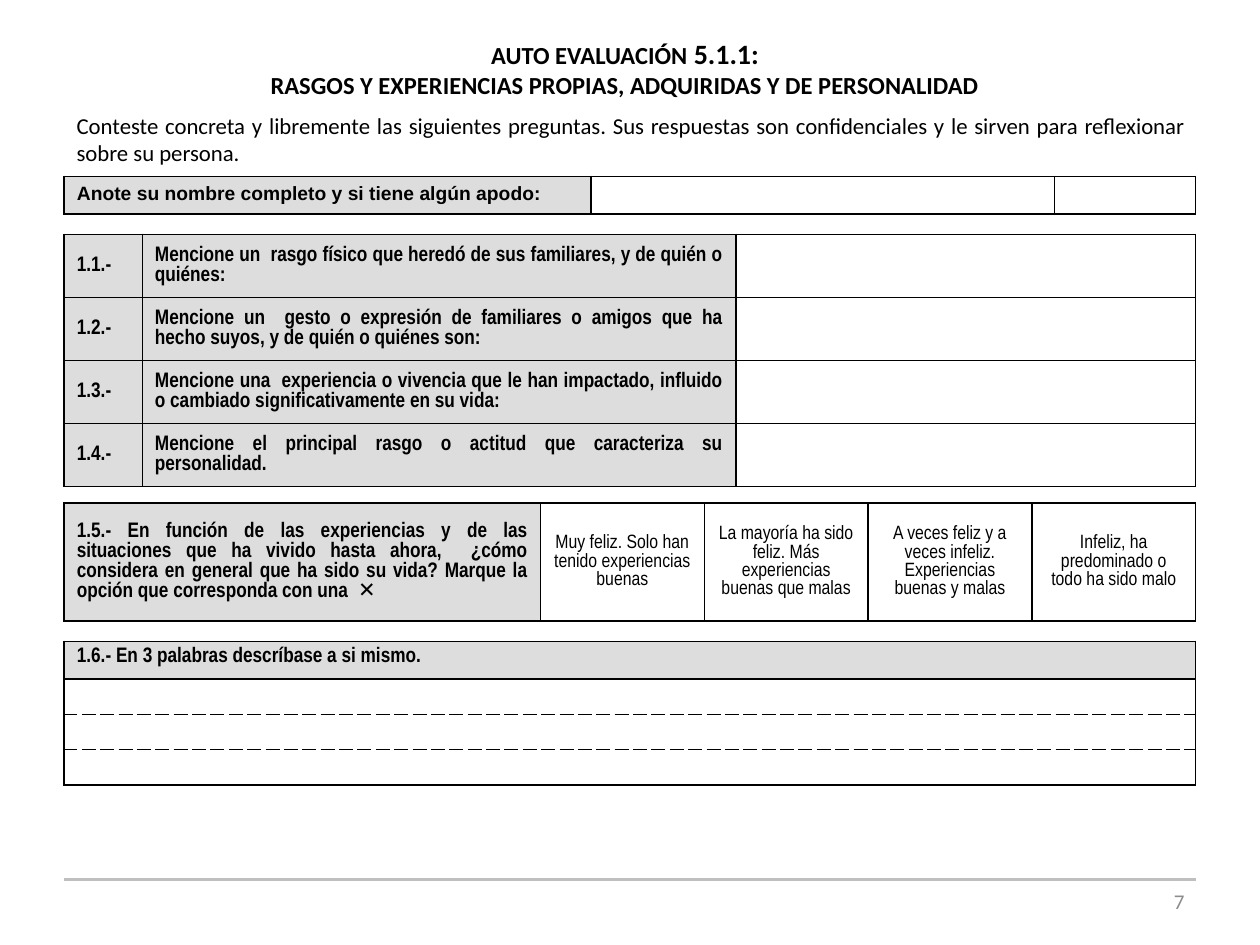
"""Build the self-assessment slide with its question tables."""
from lxml.etree import SubElement
from pptx import Presentation
from pptx.dml.color import RGBColor
from pptx.enum.shapes import MSO_CONNECTOR
from pptx.enum.text import MSO_ANCHOR, PP_ALIGN
from pptx.oxml.ns import qn
from pptx.util import Inches, Pt

LEFT, WIDE = 0.51, 8.98
GREY = "DDDDDD"


def style(para, text, face, size, bold=False, align=PP_ALIGN.JUSTIFY, color="000000"):
    para.text = text
    para.alignment = align
    para.font.name = face
    para.font.size = Pt(size)
    para.font.bold = bold
    para.font.color.rgb = RGBColor.from_string(color)
    if not text:
        SubElement(para._p, qn("a:endParaRPr"), sz=str(size * 100))


def grid(top, cols, rows, texts, face="Arial Narrow", anchor=MSO_ANCHOR.MIDDLE, dash=()):
    high = Inches(sum(rows))
    frame = slide.shapes.add_table(len(rows), len(cols), Inches(LEFT), Inches(top), Inches(WIDE), high)
    table = frame.table
    table.first_row = table.horz_banding = False
    for col, wide in zip(table.columns, cols):
        col.width = Inches(wide)
    for r, (row, tall) in enumerate(zip(table.rows, rows)):
        row.height = Inches(tall)
        for cell, (text, size, bold) in zip(row.cells, texts[r]):
            cell.vertical_anchor = anchor
            props = cell._tc.get_or_add_tcPr()
            for side in "LRTB":
                line = SubElement(props, qn(f"a:ln{side}"), w="12700")
                fill = SubElement(line, qn("a:solidFill"))
                SubElement(fill, qn("a:srgbClr"), val="000000")
                edge = {"T": r, "B": r + 1}.get(side)
                SubElement(line, qn("a:prstDash"), val="sysDash" if edge in dash else "solid")
            if bold:
                cell.fill.solid()
                cell.fill.fore_color.rgb = RGBColor.from_string(GREY)
            else:
                cell.fill.background()
            align = PP_ALIGN.JUSTIFY if bold else PP_ALIGN.CENTER
            parts = text.split("\n")
            for i, part in enumerate(parts):
                para = cell.text_frame.paragraphs[0] if i == 0 else cell.text_frame.add_paragraph()
                style(para, part, face, size, bold, align)


deck = Presentation()
deck.slide_width, deck.slide_height = Inches(10), Inches(7.5)
slide = deck.slides.add_slide(deck.slide_layouts[6])

rule = slide.shapes.add_connector(
    MSO_CONNECTOR.STRAIGHT, Inches(LEFT), Inches(6.98), Inches(LEFT + WIDE), Inches(6.98))
rule.line.color.rgb = RGBColor.from_string("BFBFBF")
rule.line.width = Pt(2)
SubElement(rule._element.spPr, qn("a:effectLst"))

boxes = []
for spot in [(0.67, 0.32, 8.58, 0.52), (LEFT, 0.84, WIDE, 0.53), (7.17, 6.95, 2.33, 0.4)]:
    box = slide.shapes.add_textbox(*map(Inches, spot)).text_frame
    box.word_wrap = True
    box.vertical_anchor = MSO_ANCHOR.MIDDLE
    boxes.append(box)
title, intro, page = boxes

head = title.paragraphs[0]
style(head, "AUTO EVALUACIÓN", "Calibri", 14, True, PP_ALIGN.CENTER)
code = head.add_run()
code.text = " 5.1.1:"
code.font.size = Pt(16)
topic = title.add_paragraph()
style(topic, "RASGOS Y EXPERIENCIAS PROPIAS, ADQUIRIDAS Y DE PERSONALIDAD",
      "Calibri", 14, True, PP_ALIGN.CENTER)
topic.space_before = Pt(7)
head.line_spacing = topic.line_spacing = 0.6

style(intro.paragraphs[0],
      "Conteste concreta y libremente las siguientes preguntas. Sus respuestas son "
      "confidenciales y le sirven para reflexionar sobre su persona.", "Calibri", 13)
style(page.paragraphs[0], "7", "Calibri", 12, align=PP_ALIGN.RIGHT, color="8C8C8C")

blank = ("", 10, False)
name = ("Anote su nombre completo y si tiene algún apodo:", 11, True)
grid(1.4, [4.18, 3.68, 1.12], [0.3], [[name, blank, blank]], "Arial", MSO_ANCHOR.TOP)

asks = [
    "Mencione un  rasgo físico que heredó de sus familiares, y de quién o quiénes:",
    "Mencione un  gesto o expresión de familiares o amigos que ha hecho suyos, y de quién o quiénes son:",
    "Mencione una  experiencia o vivencia que le han impactado, influido o cambiado "
    "significativamente en su vida:",
    "Mencione el principal rasgo o actitud que caracteriza su personalidad.",
]
grid(1.86, [0.62, 4.71, 3.65], [0.5] * 4,
     [[(f"1.{n}.-", 12, True), (ask, 12, True), blank] for n, ask in enumerate(asks, 1)])

life = ("1.5.- En función de las experiencias y de las situaciones que ha vivido hasta ahora,  "
        "¿cómo considera en general que ha sido su vida? Marque la opción que corresponda con una  ✕")
moods = [
    "Muy feliz. Solo han tenido experiencias buenas",
    "La mayoría ha sido feliz. Más experiencias buenas que malas",
    "A veces feliz y a veces infeliz. Experiencias buenas y malas",
    "Infeliz, ha\npredominado o todo ha sido malo",
]
grid(3.99, [3.78] + [1.3] * 4, [0.94],
     [[(life, 12, True)] + [(mood, 11, False) for mood in moods]])

words = ("1.6.- En 3 palabras descríbase a si mismo.", 12, True)
grid(5.09, [WIDE], [0.3] + [0.28] * 3, [[words]] + [[blank]] * 3,
     anchor=MSO_ANCHOR.TOP, dash=(2, 3))

deck.save("out.pptx")
